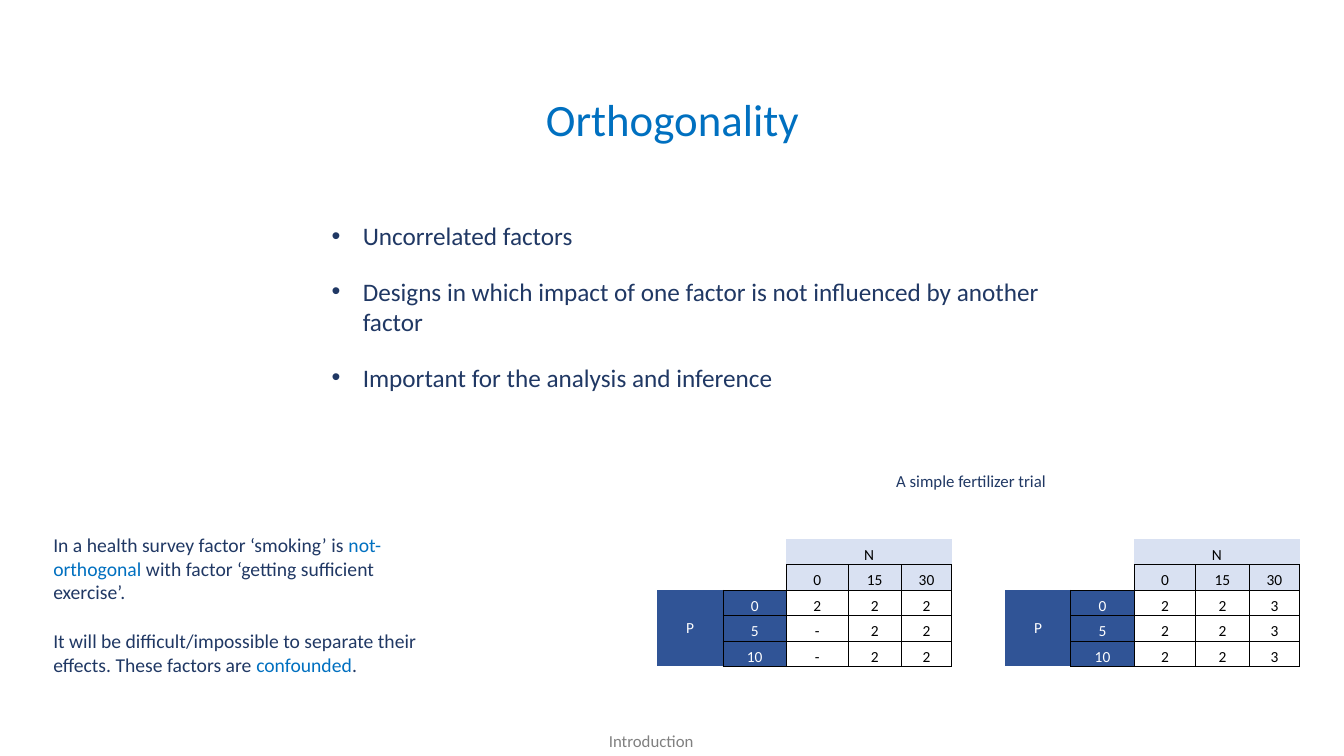
"""Build the slide on orthogonality with two fertilizer trial tables."""
from lxml import etree
from pptx import Presentation, util as u
from pptx.dml import color
from pptx.enum import text
from pptx.oxml import ns

HUES = {"blue": "0070C0", "navy": "203864", "grey": "808080", "black": "000000",
        "white": "FFFFFF", "pale": "D9E1F2", "deep": "305496"}


def add_runs(para, runs, size):
    for words, hue in runs:
        run = para.add_run()
        run.text = words
        for key, val in {"size": u.Pt(size), "name": "Calibri"}.items():
            setattr(run.font, key, val)
        run.font.color.rgb = color.RGBColor.from_string(HUES[hue])


def add_edge(cell, side, drawn):
    props = cell._tc.get_or_add_tcPr()
    line = etree.SubElement(props, ns.qn(f"a:ln{side}"), w=str(u.Pt(0.5)))
    if drawn:
        fill = etree.SubElement(line, ns.qn("a:solidFill"))
        etree.SubElement(fill, ns.qn("a:srgbClr"), val=HUES["black"])
    else:
        etree.SubElement(line, ns.qn("a:noFill"))


deck = Presentation()
deck.slide_width, deck.slide_height = u.Inches(13.33), u.Inches(7.5)
slide = deck.slides.add_slide(deck.slide_layouts[6])

left, mid = text.PP_ALIGN.LEFT, text.PP_ALIGN.CENTER
boxes = [
    ((2.95, 0.86, 7.44, 0.64), 32, {"alignment": mid}, False,
     [[("Orthogonality", "blue")]]),
    ((3.19, 2.14, 7.36, 1.82), 18, {"alignment": left, "space_before": u.Pt(18)}, True,
     [[("Uncorrelated factors", "navy")],
      [("Designs in which impact of one factor is not influenced by another factor", "navy")],
      [("Important for the analysis and inference", "navy")]]),
    ((5.94, 7.2, 2.04, 0.3), 12, {"alignment": left}, False,
     [[("Introduction", "grey")]]),
    ((0.43, 5.24, 3.95, 1.53), 14, {"alignment": left, "space_before": u.Pt(18)}, False,
     [[("In a health survey factor ‘smoking’ is ", "navy"), ("not-orthogonal", "blue"),
       (" with factor ‘getting sufficient exercise’.", "navy")],
      [("It will be difficult/impossible to separate their effects. These factors are ", "navy"),
       ("confounded", "blue"), (".", "navy")]]),
    ((8.79, 4.62, 3.39, 0.3), 12, {"alignment": left, "space_before": u.Pt(18)}, False,
     [[("A simple fertilizer trial", "navy")]]),
]
for place, size, style, dotted, paras in boxes:
    frame = slide.shapes.add_textbox(*map(u.Inches, place)).text_frame
    for key, val in {"word_wrap": True,
                     "auto_size": text.MSO_AUTO_SIZE.SHAPE_TO_FIT_TEXT}.items():
        setattr(frame, key, val)
    for num, runs in enumerate(paras):
        para = frame.add_paragraph() if num else frame.paragraphs[0]
        for key, val in style.items():
            setattr(para, key, val)
        if dotted:
            props = para._p.get_or_add_pPr()
            for key, val in {"marL": 0.31, "indent": -0.31}.items():
                props.set(key, str(u.Inches(val)))
            etree.SubElement(props, ns.qn("a:buFont"), typeface="Arial")
            etree.SubElement(props, ns.qn("a:buChar"), char="•")
        add_runs(para, runs, size)

widths = [0.65, 0.63, 0.61, 0.53, 0.5]
tall = 1.26
trials = [(6.52, ["222", "-22", "-22"]), (9.97, ["223", "223", "223"])]
bare = {(0, 0): "", (0, 1): "", (1, 0): "", (1, 1): "RB"}
for start, counts in trials:
    rows = [["", "", "N", "", ""], ["", "", "0", "15", "30"]]
    rows += [[head, dose, *vals] for head, dose, vals
             in zip(["P", "", ""], ["0", "5", "10"], counts)]
    grid = slide.shapes.add_table(5, 5, u.Inches(start), u.Inches(5.35),
                                  u.Inches(sum(widths)), u.Inches(tall)).table
    for key in ("first_row", "horz_banding"):
        setattr(grid, key, False)
    for col, wide in zip(grid.columns, widths):
        col.width = u.Inches(wide)
    for row in grid.rows:
        row.height = u.Inches(tall / 5)
    for r, words in enumerate(rows):
        for c, word in enumerate(words):
            cell = grid.cell(r, c)
            label = c == 0 and r > 1
            edges = bare.get((r, c), "B" if r == 0 else "R" if label else "LRTB")
            for side in "LRTB":
                add_edge(cell, side, side in edges)
            hue = None if r < 2 and c < 2 else "pale" if r < 2 else "deep" if c < 2 else None
            if hue:
                cell.fill.solid()
                cell.fill.fore_color.rgb = color.RGBColor.from_string(HUES[hue])
            else:
                cell.fill.background()
            form = {"margin_left": u.Inches(0.01), "margin_right": u.Inches(0.01),
                    "margin_top": u.Inches(0.01), "margin_bottom": 0,
                    "vertical_anchor": text.MSO_ANCHOR.MIDDLE if label
                    else text.MSO_ANCHOR.BOTTOM}
            for key, val in form.items():
                setattr(cell, key, val)
            para = cell.text_frame.paragraphs[0]
            para.alignment = mid
            if word:
                add_runs(para, [(word, "white" if hue == "deep" else "black")], 11)
            else:
                etree.SubElement(para._p, ns.qn("a:endParaRPr"), sz="1100")
    grid.cell(0, 2).merge(grid.cell(0, 4))
    grid.cell(2, 0).merge(grid.cell(4, 0))

deck.save("out.pptx")
